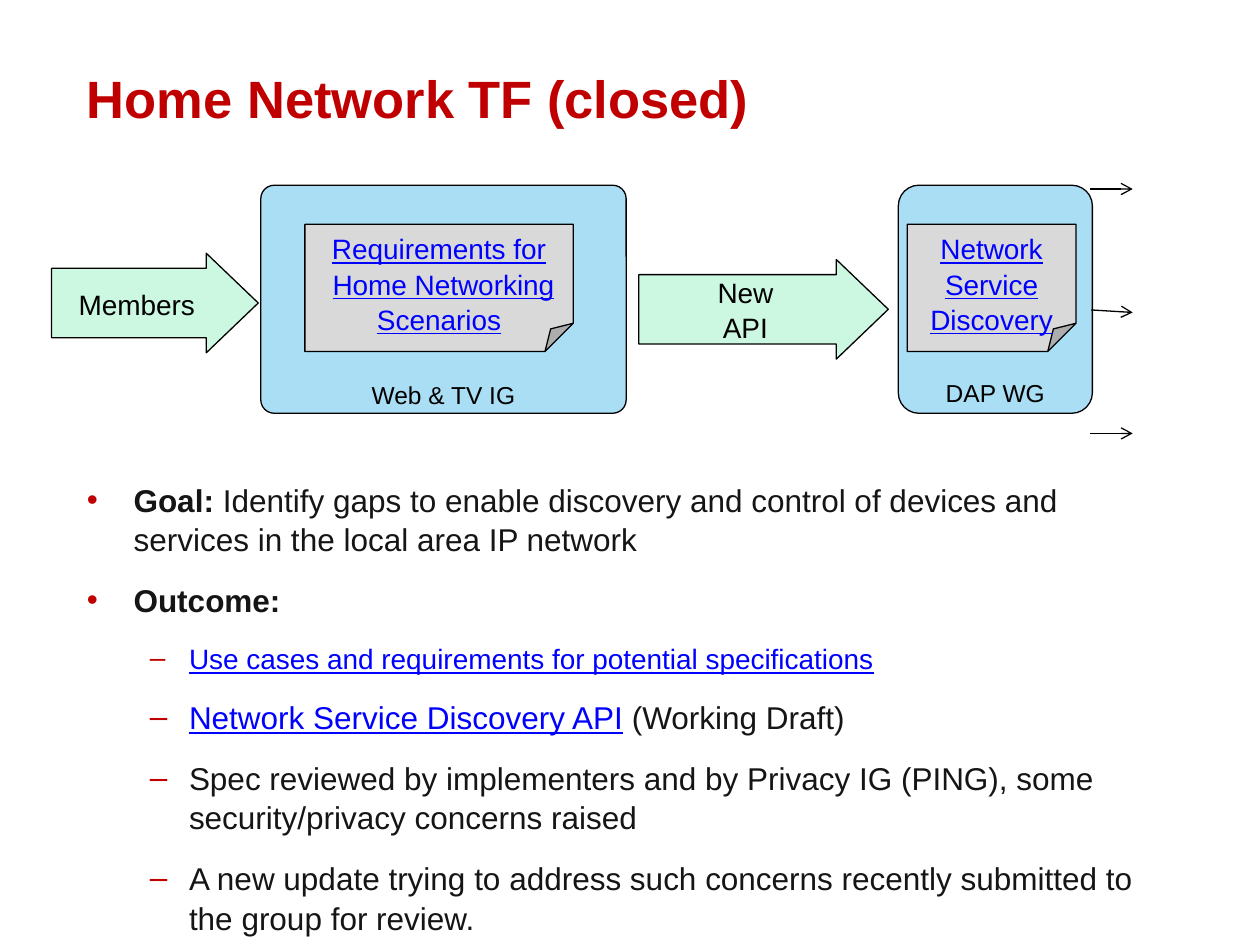
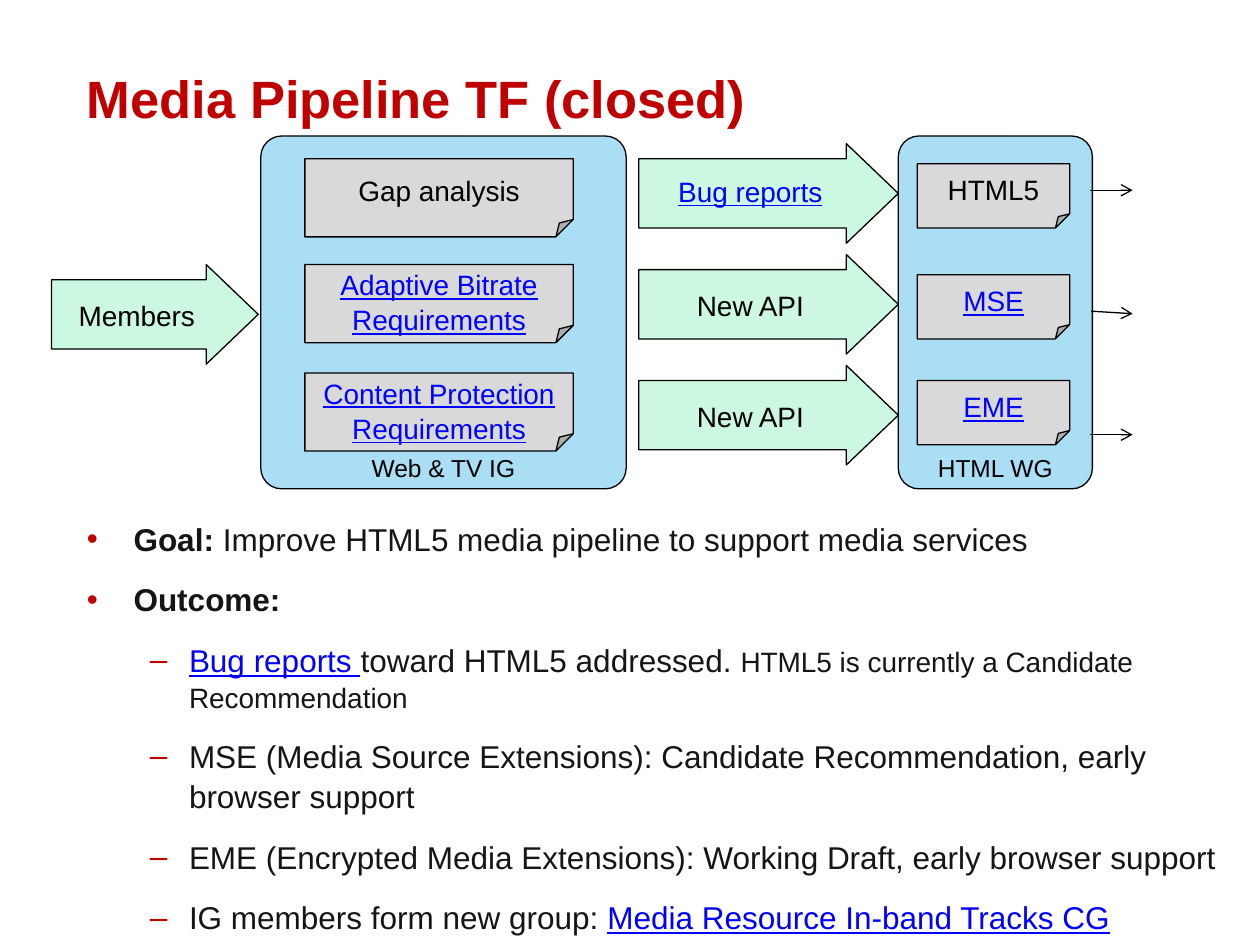
from lxml.etree import SubElement
from pptx import Presentation
from pptx.dml.color import RGBColor
from pptx.enum.shapes import MSO_CONNECTOR as Connector, MSO_SHAPE as Preset
from pptx.enum.text import MSO_ANCHOR as Anchor, MSO_AUTO_SIZE as AutoSize, PP_ALIGN as Align
from pptx.oxml.ns import qn
from pptx.util import Inches, Pt

FONT = "Arial"
RED, INK, BLACK, LINK = "C00000", "151515", "000000", "0000FF"
SKY, MINT, GRAY = "AADEF4", "CCF7E1", "D9D9D9"
LINE_WIDTH = 0.75


def color(hex_text):
    """Turn a hex string into a colour."""
    return RGBColor.from_string(hex_text)


def add_run(paragraph, text, size=18, ink=INK, bold=False, link=False):
    """Add formatted text; link text is blue and underlined."""
    run = paragraph.add_run()
    run.text = text
    font = run.font
    font.name, font.size, font.bold, font.underline = FONT, Pt(size), bold, link
    font.color.rgb = color(LINK if link else ink)


def set_indent(paragraph, left, first):
    """Set the left margin and first-line offset of a paragraph."""
    properties = paragraph._p.get_or_add_pPr()
    properties.set("marL", str(Inches(left)))
    properties.set("indent", str(Inches(first)))
    return properties


def place(shape, left, top, width, height):
    """Move and size a shape, in inches."""
    shape.left, shape.top = Inches(left), Inches(top)
    shape.width, shape.height = Inches(width), Inches(height)


def adjust(shape, **adjustments):
    """Set the named adjustments of a preset shape, as fractions."""
    guides = shape._element.spPr.find(qn("a:prstGeom")).find(qn("a:avLst"))
    for guide in list(guides):
        guides.remove(guide)
    for name, value in adjustments.items():
        guide = SubElement(guides, qn("a:gd"))
        guide.set("name", name)
        guide.set("fmla", f"val {round(value * 100000)}")


class FlowDeck:
    """Hold the shared style and the slide being drawn."""

    def __init__(self):
        """Start an empty presentation."""
        self.presentation = Presentation()
        self.presentation.slide_width = Inches(10)
        self.presentation.slide_height = Inches(7.5)
        self.slide = None

    def start_slide(self, title):
        """Add a slide with its title."""
        layout = self.presentation.slide_layouts[1]
        self.slide = self.presentation.slides.add_slide(layout)
        shape = self.slide.shapes.title
        place(shape, 0.59, 0.47, 8.82, 0.61)
        frame = shape.text_frame
        frame.vertical_anchor = Anchor.MIDDLE
        frame.auto_size = AutoSize.NONE
        paragraph = frame.paragraphs[0]
        paragraph.alignment = Align.LEFT
        add_run(paragraph, title, size=30, ink=RED, bold=True)

    def bullets(self, top, width, items):
        """Fill the body with (level, runs) items down to the slide's foot."""
        shape = self.slide.placeholders[1]
        place(shape, 0.59, top, width, 7.5 - top)
        frame = shape.text_frame
        frame.auto_size = AutoSize.NONE
        for index, (level, runs) in enumerate(items):
            paragraph = frame.add_paragraph() if index else frame.paragraphs[0]
            paragraph.level = level
            paragraph.line_spacing = 1.05
            paragraph.space_before = paragraph.space_after = Pt(6)
            left, first, mark = ((0.37, -0.37, "•"), (0.81, -0.31, "–"))[level]
            properties = set_indent(paragraph, left, first)
            bullet_color = SubElement(properties, qn("a:buClr"))
            SubElement(bullet_color, qn("a:srgbClr")).set("val", RED)
            SubElement(properties, qn("a:buChar")).set("char", mark)
            for text, style in runs:
                add_run(paragraph, text, **style)

    def block(self, preset, box, fill, adjustments, text, size=16, link=False,
              anchor=Anchor.MIDDLE, inset_top=0, inset_bottom=0):
        """Draw an outlined shape with one centred paragraph per text line."""
        shape = self.slide.shapes.add_shape(preset, 0, 0, 0, 0)
        place(shape, *box)
        adjust(shape, **adjustments)
        shape.shadow.inherit = False
        shape.fill.solid()
        shape.fill.fore_color.rgb = color(fill)
        shape.line.color.rgb = color(BLACK)
        shape.line.width = Pt(LINE_WIDTH)
        frame = shape.text_frame
        frame.word_wrap = True
        frame.vertical_anchor = anchor
        frame.margin_left = frame.margin_right = 0
        frame.margin_top, frame.margin_bottom = Inches(inset_top), Inches(inset_bottom)
        for index, line in enumerate(text.split("\n")):
            paragraph = frame.add_paragraph() if index else frame.paragraphs[0]
            paragraph.alignment = Align.CENTER
            paragraph.line_spacing = 1.05
            set_indent(paragraph, 0.07, -0.07)
            add_run(paragraph, line, size=size, ink=BLACK, link=link)

    def groups(self, top, height, working_group):
        """Draw the interest group and the working group it feeds."""
        for left, width, corner, name in ((2.07, 2.9, 0.059, "Web & TV IG"),
                                          (7.13, 1.54, 0.106, working_group)):
            self.block(Preset.ROUNDED_RECTANGLE, (left, top, width, height), SKY,
                       {"adj": corner}, name, size=14, anchor=Anchor.BOTTOM)

    def arrow(self, left, top, width, text, **style):
        """Draw a labelled block arrow."""
        self.block(Preset.RIGHT_ARROW, (left, top, width, 0.79), MINT,
                   {"adj1": 0.697, "adj2": 0.522}, text, **style)

    def members(self, top):
        """Draw the arrow of member input."""
        self.arrow(0.41, top, 1.64, "Members")

    def document(self, box, text, **style):
        """Draw a page with a folded corner."""
        self.block(Preset.FOLDED_CORNER, box, GRAY, {"adj": 0.222}, text, **style)

    def exits(self, top):
        """Draw the three thin arrows leaving the working group."""
        for left, start, end in ((8.65, 0, 0), (8.66, 0.96, 0.98), (8.65, 1.94, 1.94)):
            line = self.slide.shapes.add_connector(
                Connector.STRAIGHT, Inches(left), Inches(top + start),
                Inches(8.99), Inches(top + end))
            line.line.color.rgb = color(BLACK)
            line.line.width = Pt(LINE_WIDTH)
            properties = line._element.spPr
            SubElement(properties.find(qn("a:ln")), qn("a:tailEnd")).set("type", "arrow")
            SubElement(properties, qn("a:effectLst"))


def draw_home_network(deck):
    """Build the home network slide."""
    deck.start_slide("Home Network TF (closed)")
    deck.bullets(3.75, 8.82, [
        (0, [("Goal:", {"bold": True}),
             (" Identify gaps to enable discovery and control of devices and "
              "services in the local area IP network", {})]),
        (0, [("Outcome:", {"bold": True})]),
        (1, [("Use cases and requirements for potential specifications",
              {"size": 16, "link": True})]),
        (1, [("Network Service Discovery API", {"link": True}), (" (Working Draft)", {})]),
        (1, [("Spec reviewed by implementers and by Privacy IG (PING), some "
              "security/privacy concerns raised", {})]),
        (1, [("A new update trying to address such concerns recently submitted "
              "to the group for review.", {})]),
    ])
    deck.groups(1.47, 1.81, "DAP WG")
    deck.members(2.01)
    deck.arrow(5.07, 2.06, 1.98, "New\nAPI")
    deck.exits(1.5)
    for left, width, text in (
            (2.42, 2.13, "Requirements for Home Networking\nScenarios"),
            (7.2, 1.34, "Network\nService\nDiscovery")):
        deck.document((left, 1.78, width, 1.01), text, link=True,
                      inset_top=0.3, inset_bottom=0.15)


def draw_media_pipeline(deck):
    """Build the media pipeline slide."""
    deck.start_slide("Media Pipeline TF (closed)")
    deck.bullets(4.06, 9.41, [
        (0, [("Goal:", {"bold": True}),
             (" Improve HTML5 media pipeline to support media services", {})]),
        (0, [("Outcome:", {"bold": True})]),
        (1, [("Bug reports ", {"link": True}), ("toward HTML5 addressed. ", {}),
             ("HTML5 is currently a Candidate Recommendation", {"size": 16})]),
        (1, [("MSE (Media Source Extensions): Candidate Recommendation, early "
              "browser support", {})]),
        (1, [("EME (Encrypted Media Extensions): Working Draft, early browser "
              "support", {})]),
        (1, [("IG members form new group: ", {}),
             ("Media Resource In-band Tracks CG", {"link": True})]),
    ])
    deck.groups(1.08, 2.8, "HTML WG")
    deck.members(2.1)
    linked = {"link": True, "inset_top": 0.1}
    requirements = ((1.26, "Gap analysis", {}),
                    (2.1, "Adaptive Bitrate\nRequirements", linked),
                    (2.96, "Content Protection\nRequirements", linked))
    for top, text, style in requirements:
        deck.document((2.42, top, 2.13, 0.62), text, **style)
    requests = (("Bug reports", {"link": True, "inset_bottom": 0.05}),
                ("New API", {}), ("New API", {}))
    for row, (text, style) in enumerate(requests):
        deck.arrow(5.07, 1.14 + 0.88 * row, 2.06, text, **style)
    for top, text, link in ((1.3, "HTML5", False), (2.18, "MSE", True), (3.02, "EME", True)):
        deck.document((7.28, top, 1.21, 0.51), text, link=link)
    deck.exits(1.51)


def main():
    """Build and save both slides."""
    deck = FlowDeck()
    draw_home_network(deck)
    draw_media_pipeline(deck)
    deck.presentation.save("out.pptx")


if __name__ == "__main__":
    main()
